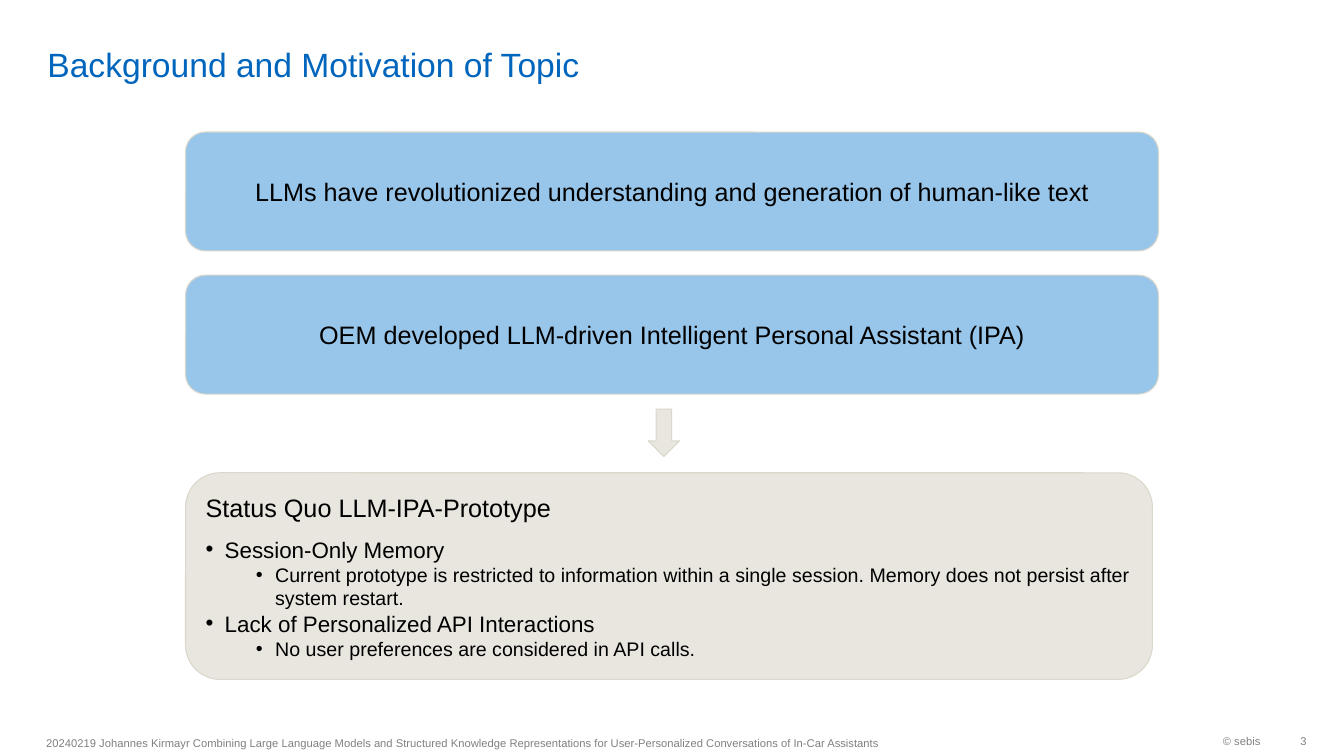
"""Build the background and motivation slide."""
from lxml.etree import SubElement
from pptx import Presentation
from pptx.dml.color import RGBColor
from pptx.enum.shapes import MSO_SHAPE as Shape
from pptx.enum.text import MSO_ANCHOR as Anchor, MSO_AUTO_SIZE as AutoSize, PP_ALIGN as Align
from pptx.oxml.ns import qn
from pptx.util import Pt

PX = 9144
FONT = "Arial"
COLORS = {
    "title": "0065BD",
    "statement": "98C6EA",
    "panel": "E8E6DF",
    "outline": "DAD7CB",
    "text": "000000",
    "footer": "808080",
}
STATEMENTS = [
    "LLMs have revolutionized understanding and generation of human-like text",
    "OEM developed LLM-driven Intelligent Personal Assistant (IPA)",
]
LIMITATIONS = [
    (
        "Session-Only Memory",
        "Current prototype is restricted to information within a single session. "
        "Memory does not persist after system restart.",
    ),
    (
        "Lack of Personalized API Interactions",
        "No user preferences are considered in API calls.",
    ),
]
FOOTER = (
    "20240219 Johannes Kirmayr Combining Large Language Models and Structured Knowledge "
    "Representations for User-Personalized Conversations of In-Car Assistants"
)


def px(*lengths):
    return [length * PX for length in lengths]


def rgb(name):
    return RGBColor.from_string(COLORS[name])


def write(paragraph, text, size, color="text", align=Align.LEFT):
    paragraph.alignment = align
    run = paragraph.add_run()
    run.text = text
    run.font.name = FONT
    run.font.size = Pt(size)
    run.font.color.rgb = rgb(color)


def add_bullet(paragraph, level):
    paragraph.level = level
    properties = paragraph._p.get_or_add_pPr()
    properties.set("marL", str((19 + 50 * level) * PX))
    properties.set("indent", str(-19 * PX))
    SubElement(properties, qn("a:buFont")).set("typeface", FONT)
    SubElement(properties, qn("a:buChar")).set("char", "•")


def set_title(slide, text):
    title = slide.shapes.title
    title.left, title.top, title.width, title.height = px(37, 5, 1158, 79)
    frame = title.text_frame
    frame.auto_size = AutoSize.NONE
    frame.vertical_anchor = Anchor.BOTTOM
    frame.margin_top = frame.margin_bottom = 0
    write(frame.paragraphs[0], text, 24, "title")


def add_block(slide, kind, box, fill):
    block = slide.shapes.add_shape(kind, *px(*box))
    block.shadow.inherit = False
    block.fill.solid()
    block.fill.fore_color.rgb = rgb(fill)
    block.line.color.rgb = rgb("outline")
    block.line.width = Pt(0.75)
    block.text_frame.vertical_anchor = Anchor.MIDDLE
    return block.text_frame


def add_footer(slide, box, text, align, right_margin=10):
    frame = slide.shapes.add_textbox(*px(*box)).text_frame
    frame.word_wrap = True
    frame.vertical_anchor = Anchor.MIDDLE
    frame.margin_right = right_margin * PX
    write(frame.paragraphs[0], text, 8, "footer", align)


def add_status_quo(slide):
    panel = add_block(slide, Shape.ROUNDED_RECTANGLE, (184, 469, 959, 205), "panel")
    write(panel.paragraphs[0], "Status Quo LLM-IPA-Prototype", 18)
    for index, limitation in enumerate(LIMITATIONS):
        for level, text in enumerate(limitation):
            point = panel.add_paragraph()
            add_bullet(point, level)
            if index == level == 0:
                point.line_spacing = 1.5
            write(point, text, 16 - 2 * level)


def main():
    deck = Presentation()
    deck.slide_width, deck.slide_height = px(1333, 750)
    slide = deck.slides.add_slide(deck.slide_layouts[5])
    set_title(slide, "Background and Motivation of Topic")
    for index, text in enumerate(STATEMENTS):
        box = (184, 131 + 142 * index, 965, 118)
        statement = add_block(slide, Shape.ROUNDED_RECTANGLE, box, "statement")
        write(statement.paragraphs[0], text, 18, align=Align.CENTER)
    add_status_quo(slide)
    add_block(slide, Shape.DOWN_ARROW, (643, 406, 31, 47), "panel")
    add_footer(slide, (36, 724, 937, 26), FOOTER, Align.LEFT)
    add_footer(slide, (1026, 720, 234, 30), "© sebis", Align.RIGHT)
    add_footer(slide, (1260, 720, 36, 30), "3", Align.RIGHT, right_margin=0)
    deck.save("out.pptx")


if __name__ == "__main__":
    main()
